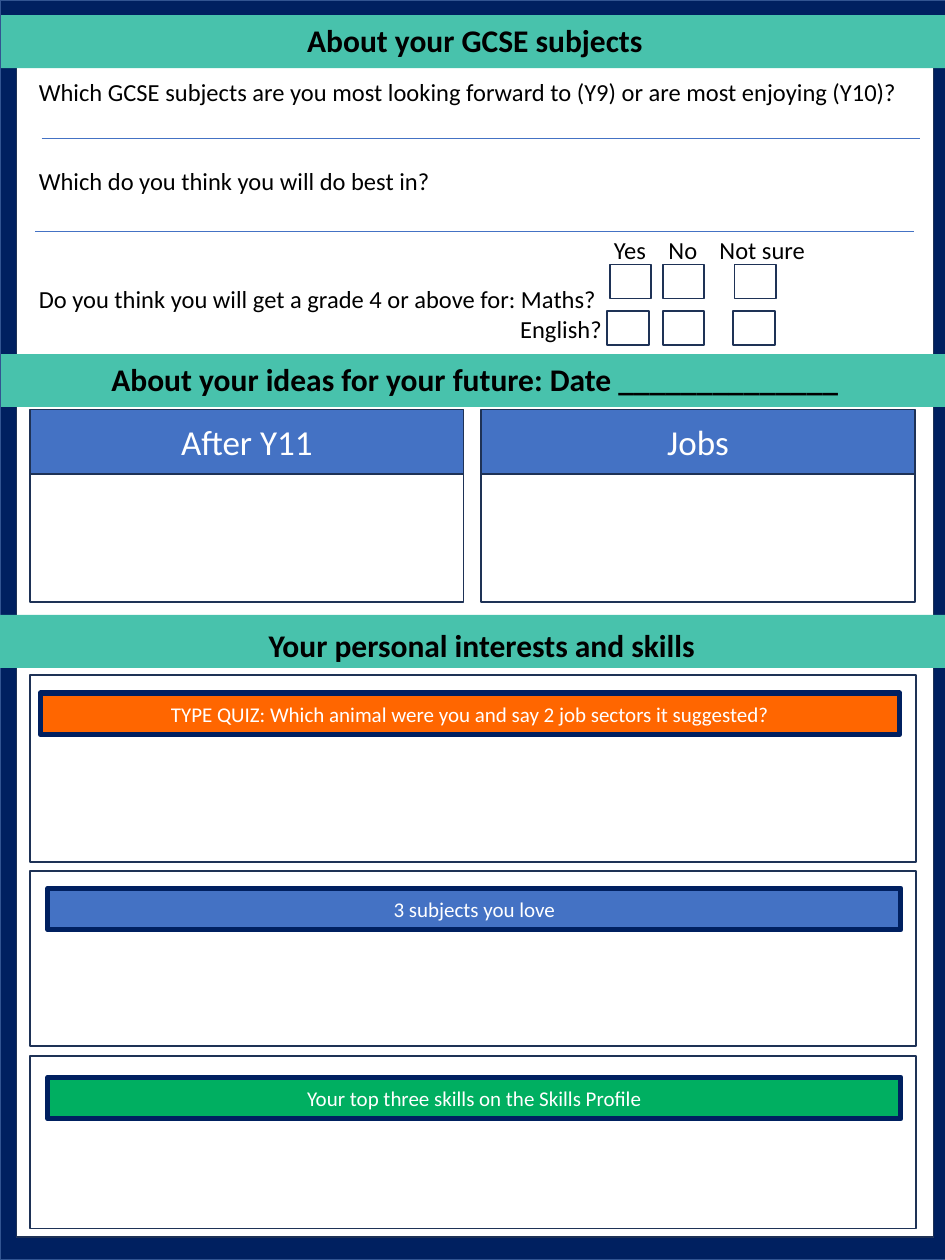
from lxml import etree
from pptx import Presentation
from pptx.dml.color import RGBColor
from pptx.enum.shapes import MSO_CONNECTOR, MSO_SHAPE
from pptx.enum.text import MSO_ANCHOR, PP_ALIGN
from pptx.oxml.ns import qn
from pptx.util import Inches, Pt

RECT = MSO_SHAPE.RECTANGLE
STRAIGHT = MSO_CONNECTOR.STRAIGHT
CENTER = PP_ALIGN.CENTER
MIDDLE = MSO_ANCHOR.MIDDLE
TOP = MSO_ANCHOR.TOP
FONT = "Calibri"
NAVY, OUTLINE, TEAL, BLUE = "002060", "1E3256", "48C2AC", "4472C4"
ORANGE, GREEN, WHITE, BLACK = "FF6600", "00AF61", "FFFFFF", "000000"


def rgb(value):
    """Turn a hex string into a colour."""
    return RGBColor.from_string(value)


def style(p, size, color, bold=False, align=None):
    """Set the font and alignment of a paragraph."""
    p.font.name = FONT
    p.font.size = Pt(size)
    p.font.bold = bold
    p.font.color.rgb = rgb(color)
    p.alignment = align


def add_box(slide, x, y, w, h, fill=None, line=OUTLINE, width=1):
    """Add a rectangle with optional fill and outline."""
    s = slide.shapes.add_shape(RECT, Inches(x), Inches(y), Inches(w), Inches(h))
    s.shadow.inherit = False
    if fill:
        s.fill.solid()
        s.fill.fore_color.rgb = rgb(fill)
    else:
        s.fill.background()
    if line:
        s.line.color.rgb = rgb(line)
        s.line.width = Pt(width)
    else:
        s.line.fill.background()
    return s


def add_label(s, text, size, color=WHITE, bold=False, anchor=MIDDLE):
    """Write one centred line inside a shape."""
    tf = s.text_frame
    tf.word_wrap = True
    tf.vertical_anchor = anchor
    p = tf.paragraphs[0]
    p.text = text
    style(p, size, color, bold, CENTER)


def add_text(slide, x, y, w, h):
    """Add a wrapping text box and return its text frame."""
    tf = slide.shapes.add_textbox(Inches(x), Inches(y), Inches(w), Inches(h)).text_frame
    tf.word_wrap = True
    return tf


def add_answer_line(slide, x, y, length):
    """Add a thin horizontal writing line."""
    s = slide.shapes.add_connector(STRAIGHT, Inches(x), Inches(y), Inches(x + length), Inches(y))
    s.line.color.rgb = rgb(BLUE)
    s.line.width = Pt(0.5)
    etree.SubElement(s._element.spPr, qn("a:effectLst"))


def add_interests(slide):
    """Add the interests heading and its three answer panels."""
    add_box(slide, 0, 4.88, 7.55, 0.42, TEAL, None)
    tf = add_text(slide, 0.17, 4.84, 7.31, 0.41)
    tf.margin_left = tf.margin_right = tf.margin_top = tf.margin_bottom = 0
    p = tf.paragraphs[0]
    p.text = "Your personal interests and skills"
    p.line_spacing = Pt(31)
    style(p, 18, BLACK, True, CENTER)
    panels = [
        (5.36, 1.48, 0.32, 5.5, 6.82, ORANGE,
         "TYPE QUIZ: Which animal were you and say 2 job sectors it suggested?"),
        (6.91, 1.39, 0.38, 7.05, 6.77, BLUE, "3 subjects you love"),
        (8.38, 1.37, 0.38, 8.55, 6.77, GREEN, "Your top three skills on the Skills Profile"),
    ]
    for top, height, x, y, w, fill, text in panels:
        add_box(slide, 0.24, top, 7.03, height)
        add_label(add_box(slide, x, y, w, 0.33, fill, NAVY, 3), text, 12)


def add_questions(slide):
    """Add the subject questions with their writing lines."""
    questions = [
        ("Which GCSE subjects are you most looking forward to (Y9) "
         "or are most enjoying (Y10)?", 0, 0),
        ("Which do you think you will do best in?", 34, 0),
        ("Do you think you will get a grade 4 or above for: Maths?", 51, 0),
        ("English?", 0, 3.82),
    ]
    tf = add_text(slide, 0.21, 0.56, 7.2, 2.22)
    for i, (text, before, indent) in enumerate(questions):
        p = tf.add_paragraph() if i else tf.paragraphs[0]
        p.text = text
        p.space_before = Pt(before)
        style(p, 14, BLACK)
        p._p.get_or_add_pPr().set("marL", str(Inches(indent)))
    add_answer_line(slide, 0.33, 1.1, 6.97)
    add_answer_line(slide, 0.28, 1.84, 6.97)


def add_tick_boxes(slide):
    """Add the answer headings with two tick boxes under each."""
    columns = [
        ("Yes", 4.73, 0.54, 4.84, 4.82),
        ("No", 5.15, 0.54, 5.26, 5.26),
        ("Not sure", 5.58, 0.94, 5.83, 5.82),
    ]
    for text, x, w, maths_x, english_x in columns:
        p = add_text(slide, x, 1.82, w, 0.34).paragraphs[0]
        p.text = text
        style(p, 14, BLACK, align=CENTER)
        add_box(slide, maths_x, 2.1, 0.33, 0.27)
        add_box(slide, english_x, 2.47, 0.33, 0.27)


def add_future(slide):
    """Add the two panels for future ideas."""
    for text, x in (("After Y11", 0.24), ("Jobs", 3.82)):
        add_box(slide, x, 3.49, 3.44, 1.29)
        add_label(add_box(slide, x, 3.25, 3.44, 0.51, BLUE), text, 20)


def main():
    """Build and save the worksheet."""
    prs = Presentation()
    prs.slide_width = Inches(7.5)
    prs.slide_height = Inches(10)
    slide = prs.slides.add_slide(prs.slide_layouts[6])
    add_box(slide, 0, 0, 7.52, 10, NAVY, "325491")
    add_box(slide, 0.13, 0.17, 7.28, 9.65, WHITE)
    add_interests(slide)
    add_questions(slide)
    add_tick_boxes(slide)
    add_future(slide)
    for text, y in (("About your GCSE subjects", 0.12),
                    ("About your ideas for your future: Date ______________", 2.81)):
        add_label(add_box(slide, 0.01, y, 7.52, 0.42, TEAL, None), text, 18, BLACK, True, TOP)
    prs.save("out.pptx")


if __name__ == "__main__":
    main()
